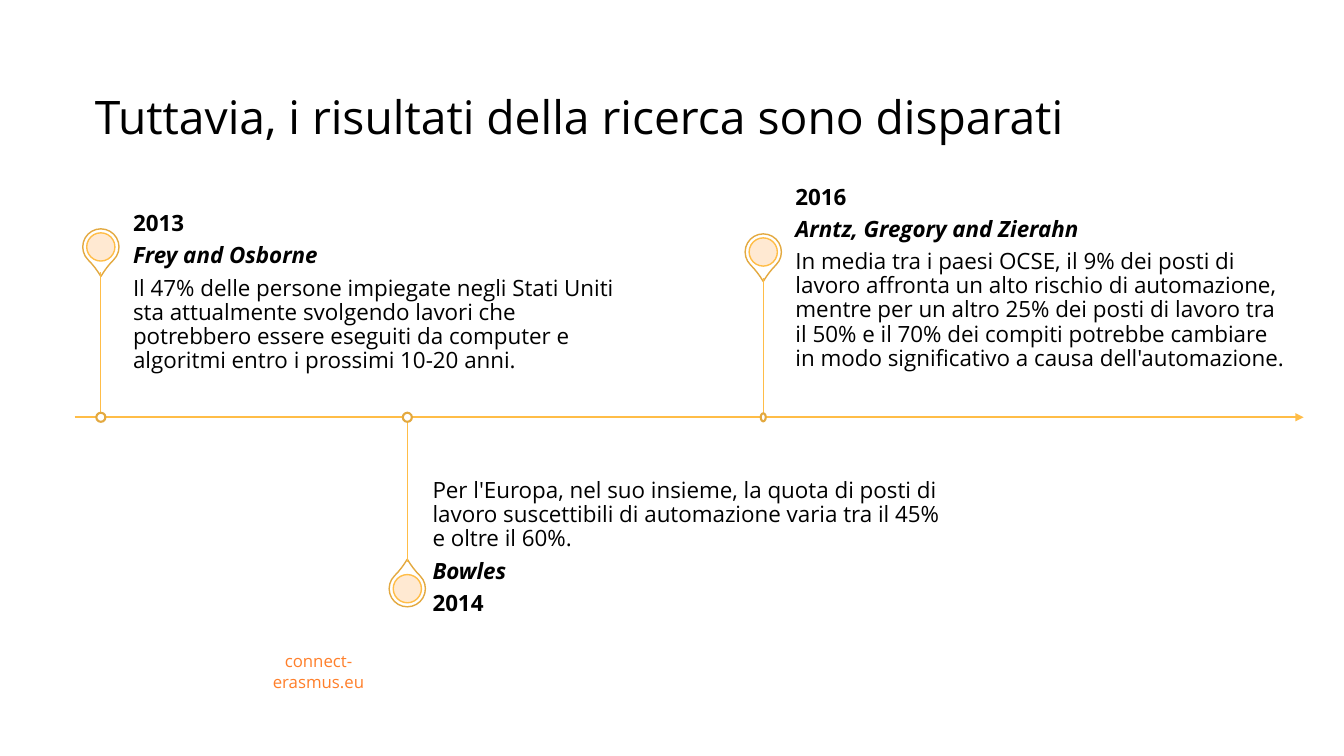
from dataclasses import dataclass

import lxml.etree
import pptx
import pptx.dml.color
import pptx.enum.shapes
import pptx.enum.text
import pptx.oxml
import pptx.oxml.ns
import pptx.util

PX = 9144
FONT = "Open Sans"
AMBER = pptx.dml.color.RGBColor(0xFF, 0xBD, 0x47)
OCHRE = pptx.dml.color.RGBColor(0xE3, 0xA9, 0x40)
PEACH = pptx.dml.color.RGBColor(0xFF, 0xE7, 0xCE)
ORANGE = pptx.dml.color.RGBColor(0xFF, 0x7F, 0x2A)
WHITE = pptx.dml.color.RGBColor(0xFF, 0xFF, 0xFF)
BLACK = pptx.dml.color.RGBColor(0x00, 0x00, 0x00)

SHAPE = pptx.enum.shapes.MSO_SHAPE
ANCHOR = pptx.enum.text.MSO_ANCHOR
ALIGN = pptx.enum.text.PP_ALIGN

AXIS_Y = 414
PIN_SIZE = 36
HALO_SIZE = 28


@dataclass(frozen=True)
class Line:
    text: str
    size: int = 16
    bold: bool = False
    italic: bool = False
    color: pptx.dml.color.RGBColor = BLACK


@dataclass(frozen=True)
class TextBlock:
    box: tuple[int, int, int, int]
    lines: tuple[Line, ...]
    anchor: ANCHOR = ANCHOR.MIDDLE
    insets: tuple[int, int, int, int] = (0, 0, 11, 0)
    align: ALIGN = ALIGN.LEFT
    spacing: float = 0.9


@dataclass(frozen=True)
class Milestone:
    x: int
    pin_y: int
    rotation: int
    stem: tuple[int, int]
    dot: tuple[int, int]
    blocks: tuple[TextBlock, ...]


TITLE = TextBlock(
    (84, 72, 1150, 74),
    (Line("Tuttavia, i risultati della ricerca sono disparati", 33),),
    ANCHOR.BOTTOM, (10, 5, 10, 5), spacing=0.7)

FOOTER = TextBlock(
    (228, 651, 176, 30),
    (Line("connect-erasmus.eu", 12, color=ORANGE),),
    insets=(10, 5, 10, 5), align=ALIGN.CENTER, spacing=1.0)

MILESTONES = (
    Milestone(100, 245, 135, (270, AXIS_Y), (9, 9), (
        TextBlock((132, 264, 506, 144), (
            Line("Il 47% delle persone impiegate negli Stati Uniti sta "
                 "attualmente svolgendo lavori che potrebbero essere eseguiti "
                 "da computer e algoritmi entro i prossimi 10-20 anni."),
        ), ANCHOR.TOP, (0, 11, 11, 17)),
        TextBlock((132, 213, 506, 51), (
            Line("2013", bold=True),
            Line("Frey and Osborne", bold=True, italic=True),
        )),
    )),
    Milestone(404, 584, 315, (AXIS_Y, 558), (9, 9), (
        TextBlock((429, 414, 506, 144), (
            Line("Per l'Europa, nel suo insieme, la quota di posti di lavoro "
                 "suscettibili di automazione varia tra il 45% e oltre il 60%."),
        ), ANCHOR.BOTTOM, (0, 17, 0, 11)),
        TextBlock((429, 558, 506, 51), (
            Line("Bowles", bold=True, italic=True),
            Line("2014", bold=True),
        )),
    )),
    Milestone(757, 250, 135, (276, 410), (5, 8), (
        TextBlock((789, 221, 503, 111), (
            Line("2016", bold=True),
            Line("Arntz, Gregory and Zierahn", bold=True, italic=True),
            Line("In media tra i paesi OCSE, il 9% dei posti di lavoro affronta "
                 "un alto rischio di automazione, mentre per un altro 25% dei "
                 "posti di lavoro tra il 50% e il 70% dei compiti potrebbe "
                 "cambiare in modo significativo a causa dell'automazione."),
        )),
    )),
)


def px(*values: int) -> list[pptx.util.Emu]:
    return [pptx.util.Emu(round(value * PX)) for value in values]


def fill_text(sp, block: TextBlock) -> None:
    sp.left, sp.top, sp.width, sp.height = px(*block.box)
    tf = sp.text_frame
    tf.word_wrap = True
    tf.auto_size = pptx.enum.text.MSO_AUTO_SIZE.NONE
    tf.vertical_anchor = block.anchor
    (tf.margin_left, tf.margin_top,
     tf.margin_right, tf.margin_bottom) = px(*block.insets)
    for index, line in enumerate(block.lines):
        p = tf.add_paragraph() if index else tf.paragraphs[0]
        p.alignment = block.align
        p.line_spacing = block.spacing
        p.space_before = pptx.util.Pt(5.6 if index else 0)
        r = p.add_run()
        r.text = line.text
        r.font.name = FONT
        r.font.size = pptx.util.Pt(line.size)
        r.font.bold = line.bold
        r.font.italic = line.italic
        r.font.color.rgb = line.color


def add_text(s, block: TextBlock) -> None:
    fill_text(s.shapes.add_textbox(*px(*block.box)), block)


def add_line(s, start: tuple[int, int], end: tuple[int, int], width: float):
    line = s.shapes.add_connector(
        pptx.enum.shapes.MSO_CONNECTOR.STRAIGHT, *px(*start, *end))
    line.line.color.rgb = AMBER
    line.line.width = pptx.util.Pt(width)
    lxml.etree.SubElement(
        line.element.spPr, pptx.oxml.ns.qn("a:effectLst"))
    return line


def add_centred(s, kind: SHAPE, centre: tuple[int, int], size: tuple[int, int],
                fill: pptx.dml.color.RGBColor, outline: pptx.dml.color.RGBColor,
                width: float):
    (x, y), (w, h) = centre, size
    sp = s.shapes.add_shape(kind, *px(x - w / 2, y - h / 2, w, h))
    sp.shadow.inherit = False
    sp.fill.solid()
    sp.fill.fore_color.rgb = fill
    sp.line.color.rgb = outline
    sp.line.width = pptx.util.Pt(width)
    return sp


def add_axis(s) -> None:
    axis = add_line(s, (74, AXIS_Y), (1293, AXIS_Y), 1.5)
    lxml.etree.SubElement(
        axis.line._get_or_add_ln(), pptx.oxml.ns.qn("a:tailEnd"), type="triangle")


def add_milestone(s, item: Milestone) -> None:
    centre = (item.x, item.pin_y)
    pin = add_centred(s, SHAPE.TEAR, centre, (PIN_SIZE, PIN_SIZE), WHITE, OCHRE, 1)
    pin.adjustments[0] = 1.15
    pin.rotation = item.rotation
    halo = add_centred(
        s, SHAPE.OVAL, centre, (HALO_SIZE, HALO_SIZE), PEACH, AMBER, 1)
    color = halo.element.spPr.find(".//" + pptx.oxml.ns.qn("a:srgbClr"))
    lxml.etree.SubElement(color, pptx.oxml.ns.qn("a:alpha"), val="90000")
    for block in item.blocks:
        add_text(s, block)
    top, bottom = item.stem
    add_line(s, (item.x, top), (item.x, bottom), 0.75)
    add_centred(s, SHAPE.OVAL, (item.x, AXIS_Y), item.dot, WHITE, OCHRE, 1.5)


def main() -> None:
    prs = pptx.Presentation()
    prs.slide_width, prs.slide_height = px(1333, 750)
    s = prs.slides.add_slide(prs.slide_layouts.get_by_name("Title Only"))
    fill_text(s.shapes.title, TITLE)
    add_axis(s)
    for item in MILESTONES:
        add_milestone(s, item)
    add_text(s, FOOTER)
    prs.save("out.pptx")


if __name__ == "__main__":
    main()
